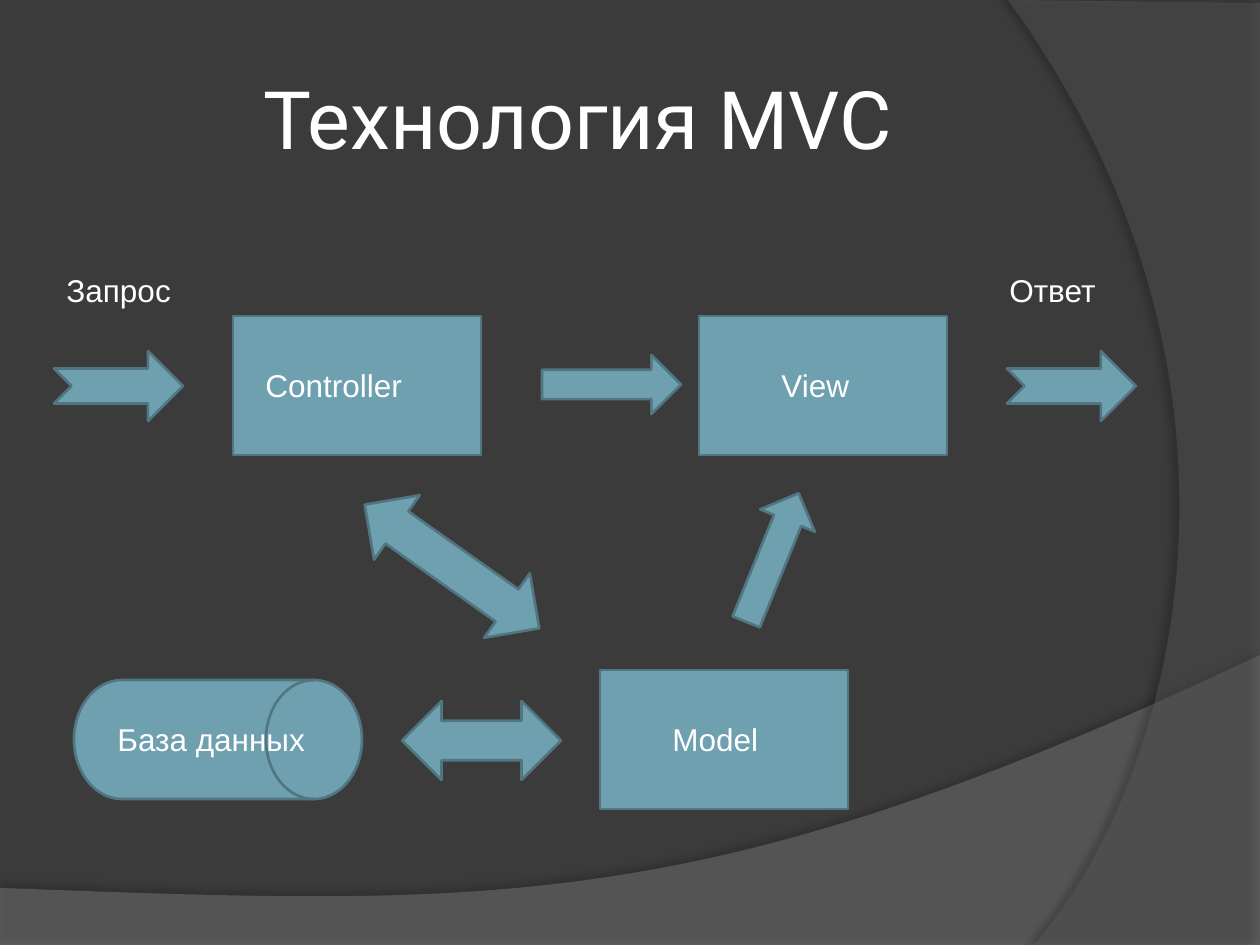
from lxml import etree
from pptx import Presentation
from pptx import util as u
from pptx.dml.color import RGBColor
from pptx.enum import shapes, text
from pptx.oxml.ns import qn

THEME = {
    "background": "3B3B3B", "fill": "6EA0B0", "line": "517682", "text": "FFFFFF",
    "title_font": "Roboto", "label_font": "Arial",
    "title_size": 46, "label_size": 18, "line_width": 1.5,
}
PX = 914400 // 126
WIDTH, HEIGHT = 1260, 945

# Background waves: straight corners, then one cubic curve from the last corner
WAVES = [
    {"corners": [(0, 888), (0, 946), (1260, 946), (1260, 655)],
     "curve": [(704, 919), (493, 906), (0, 888)],
     "color": "7F7F7F", "alpha": 45,
     "shadow": {"alpha": 35, "blur": 4, "dist": 3.5, "angle": 270}},
    {"corners": [(1260, 3), (1260, 945), (1034, 945)],
     "curve": [(1178, 780), (1283, 378), (1008, 0)],
     "color": "5E5E5E", "alpha": 40,
     "shadow": {"alpha": 45, "blur": 4, "dist": 4, "angle": 180}},
]

# Diagram: kind -> preset and size, then kind, left, top, rotation
KINDS = {
    "box": (shapes.MSO_SHAPE.FLOWCHART_PROCESS, 248, 139),
    "database": (shapes.MSO_SHAPE.FLOWCHART_DIRECT_ACCESS_STORAGE, 288, 119),
    "outer arrow": (shapes.MSO_SHAPE.NOTCHED_RIGHT_ARROW, 129, 70),
    "arrow": (shapes.MSO_SHAPE.RIGHT_ARROW, 139, 59),
    "exchange": (shapes.MSO_SHAPE.LEFT_RIGHT_ARROW, 159, 79),
    "long exchange": (shapes.MSO_SHAPE.LEFT_RIGHT_ARROW, 214, 79),
}
DIAGRAM = [
    ("outer arrow", 54, 351, 0),
    ("box", 233, 316, 0),
    ("arrow", 542, 355, 0),
    ("box", 699, 316, 0),
    ("outer arrow", 1007, 351, 0),
    ("long exchange", 345, 527, 35.3),
    ("arrow", 703, 528, 292.2),
    ("database", 74, 680, 0),
    ("exchange", 402, 701, 0),
    ("box", 600, 670, 0),
]

# Text: left, top, width
TITLE = ("Технология MVC", 63, 38, 1029, 158)
LABEL_HEIGHT = 50
LABELS = [
    ("Запрос", 54, 265, 131), ("Ответ", 997, 265, 112),
    ("Controller", 253, 360, 164), ("View", 769, 360, 93),
    ("База данных", 105, 714, 215), ("Model", 660, 714, 112),
]


def color(name):
    return RGBColor.from_string(name)


def emu(*lengths):
    return [length * PX for length in lengths]


def paint(shape, fill):
    shape.shadow.inherit = False
    shape.fill.solid()
    shape.fill.fore_color.rgb = color(fill)


def add_alpha(node, percent):
    etree.SubElement(node, qn("a:alpha"), val=str(percent * 1000))


def curve_points(start, first, second, end, steps=60):
    for step in range(1, steps + 1):
        t = step / steps
        weights = ((1 - t) ** 3, 3 * t * (1 - t) ** 2, 3 * t * t * (1 - t), t ** 3)
        yield tuple(sum(w * point[axis] for w, point in
                        zip(weights, (start, first, second, end))) for axis in (0, 1))


def add_wave(slide, corners, curve, color, alpha, shadow):
    points = corners + list(curve_points(corners[-1], *curve))
    builder = slide.shapes.build_freeform(*emu(*points[0]), scale=1.0)
    builder.add_line_segments([emu(*point) for point in points[1:]], close=True)
    shape = builder.convert_to_shape()
    paint(shape, color)
    shape.line.fill.background()
    properties = shape.element.spPr
    add_alpha(properties.find(qn("a:solidFill") + "/" + qn("a:srgbClr")), alpha)
    outer = etree.SubElement(
        properties.find(qn("a:effectLst")), qn("a:outerShdw"),
        blurRad=str(u.Pt(shadow["blur"])), dist=str(u.Pt(shadow["dist"])),
        dir=str(shadow["angle"] * 60000), algn="ctr", rotWithShape="0")
    add_alpha(etree.SubElement(outer, qn("a:srgbClr"), val="000000"), shadow["alpha"])


def add_diagram_shape(slide, kind, left, top, rotation):
    preset, width, height = KINDS[kind]
    shape = slide.shapes.add_shape(preset, *emu(left, top, width, height))
    paint(shape, THEME["fill"])
    shape.line.color.rgb = color(THEME["line"])
    shape.line.width = u.Pt(THEME["line_width"])
    shape.rotation = rotation


def add_text(slide, words, box, role, frame_format, alignment):
    frame = slide.shapes.add_textbox(*emu(*box)).text_frame
    for name, value in frame_format.items():
        setattr(frame, name, value)
    paragraph = frame.paragraphs[0]
    paragraph.alignment = alignment
    run = paragraph.add_run()
    run.text = words
    run.font.name = THEME[role + "_font"]
    run.font.size = u.Pt(THEME[role + "_size"])
    run.font.color.rgb = color(THEME["text"])


def main():
    presentation = Presentation()
    presentation.slide_width, presentation.slide_height = emu(WIDTH, HEIGHT)
    slide = presentation.slides.add_slide(presentation.slide_layouts[6])
    slide.background.fill.solid()
    slide.background.fill.fore_color.rgb = color(THEME["background"])

    # Background
    for wave in WAVES:
        add_wave(slide, **wave)

    # Title
    margins = {"margin_" + side: u.Inches(0.05)
               for side in ("left", "top", "right", "bottom")}
    title_format = {"word_wrap": True, "vertical_anchor": text.MSO_ANCHOR.MIDDLE, **margins}
    add_text(slide, TITLE[0], TITLE[1:], "title", title_format, text.PP_ALIGN.CENTER)

    # Diagram and its labels
    for item in DIAGRAM:
        add_diagram_shape(slide, *item)
    label_format = {"word_wrap": False, "auto_size": text.MSO_AUTO_SIZE.SHAPE_TO_FIT_TEXT}
    for words, *box in LABELS:
        add_text(slide, words, (*box, LABEL_HEIGHT), "label", label_format, text.PP_ALIGN.LEFT)

    presentation.save("out.pptx")


if __name__ == "__main__":
    main()
